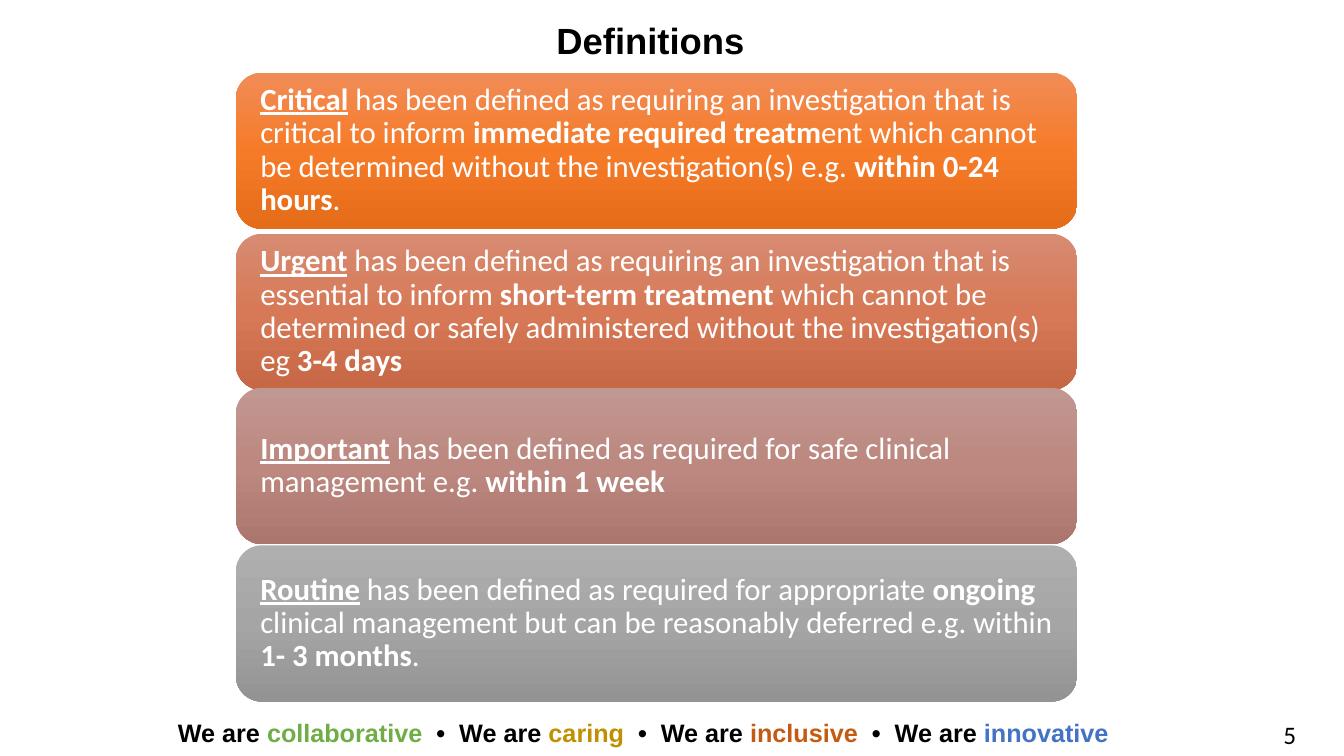
from lxml import etree
from pptx import Presentation
from pptx.dml.color import RGBColor
from pptx.enum.shapes import MSO_SHAPE as Shape
from pptx.enum.text import MSO_ANCHOR as Anchor, PP_ALIGN as Align
from pptx.oxml.ns import qn
from pptx.util import Pt

# Content: each definition has a top, gradient colours, term and (text, bold) runs
DEFINITIONS = [
    (51.8, ("F18C57", "F67B28", "E56C19"), "Critical", [
        (" has been defined as requiring an investigation that is critical to inform ", False),
        ("immediate required treatm", True),
        ("ent which cannot be determined without the investigation(s) e.g. ", False),
        ("within 0-24 hours", True),
        (".", False)]),
    (167, ("D78B72", "D77956", "C66846"), "Urgent", [
        (" has been defined as requiring an investigation that is essential to inform ", False),
        ("short-term treatment ", True),
        ("which cannot be determined or safely administered without the investigation(s) eg ", False),
        ("3-4 days", True)]),
    (277, ("C19791", "BC8880", "AA766E"), "Important", [
        (" has been defined as required for safe clinical management e.g. ", False),
        ("within 1 week", True)]),
    (389.5, ("AFAFAF", "A5A5A5", "939393"), "Routine", [
        (" has been defined as required for appropriate ", False),
        ("ongoing", True),
        (" clinical management but can be reasonably deferred e.g. within ", False),
        ("1- 3 months", True),
        (".", False)]),
]
VALUES = [("collaborative", "70AD47"), ("caring", "BF9000"),
          ("inclusive", "C55A11"), ("innovative", "4472C4")]
BLACK, WHITE = "000000", "FFFFFF"
CARD_LEFT, CARD_WIDTH, CARD_HEIGHT, CARD_INSET = 168.5, 601, 111.6, 12


def color(value):
    return RGBColor.from_string(value)


def add_run(para, text, font, size, ink, bold=False, underline=False):
    span = para.add_run()
    span.text = text
    span.font.name, span.font.size = font, Pt(size)
    span.font.bold, span.font.underline = bold, underline
    span.font.color.rgb = color(ink)


def add_text(page, left, top, width, height, align=Align.LEFT, anchor=Anchor.TOP):
    box = page.shapes.add_textbox(Pt(left), Pt(top), Pt(width), Pt(height))
    box.text_frame.word_wrap = True
    box.text_frame.vertical_anchor = anchor
    para = box.text_frame.paragraphs[0]
    para.alignment = align
    return para


def fill_gradient(shape, colors):
    gradient = etree.SubElement(shape._element.spPr, qn("a:gradFill"), rotWithShape="1")
    stops = etree.SubElement(gradient, qn("a:gsLst"))
    for index, value in enumerate(colors):
        stop = etree.SubElement(stops, qn("a:gs"), pos=str(index * 50000))
        etree.SubElement(stop, qn("a:srgbClr"), val=str(color(value)))
    etree.SubElement(gradient, qn("a:lin"), ang="5400000", scaled="0")


def add_card(page, top, colors, term, runs):
    card = page.shapes.add_shape(Shape.ROUNDED_RECTANGLE, Pt(CARD_LEFT), Pt(top),
                                 Pt(CARD_WIDTH), Pt(CARD_HEIGHT))
    fill_gradient(card, colors)
    card.line.fill.background()
    card.shadow.inherit = False
    frame = card.text_frame
    frame.word_wrap = True
    frame.vertical_anchor = Anchor.MIDDLE
    frame.margin_left = frame.margin_right = Pt(CARD_INSET)
    frame.margin_top = frame.margin_bottom = Pt(CARD_INSET)
    para = frame.paragraphs[0]
    para.alignment = Align.LEFT
    para.line_spacing = 0.9
    add_run(para, term, "Calibri", 22, WHITE, bold=True, underline=True)
    for text, bold in runs:
        add_run(para, text, "Calibri", 22, WHITE, bold)


def main():
    deck = Presentation()
    deck.slide_width, deck.slide_height = Pt(960), Pt(540)
    page = deck.slides.add_slide(deck.slide_layouts[6])

    # Footer values and page number
    para = add_text(page, 120, 509, 720, 29)
    for index, (value, ink) in enumerate(VALUES):
        lead = "  •  We are " if index else "We are "
        add_run(para, lead, "Arial", 18, BLACK, bold=True)
        add_run(para, value, "Arial", 18, ink, bold=True)
    para = add_text(page, 800, 510, 133, 29, Align.RIGHT)
    add_run(para, "5", "Calibri", 18, BLACK)

    # Definition cards
    for definition in DEFINITIONS:
        add_card(page, *definition)

    # Title
    para = add_text(page, 168.5, 4.3, 592.5, 52, Align.CENTER, Anchor.MIDDLE)
    para.line_spacing = 0.9
    add_run(para, "Definitions", "Arial", 26, BLACK, bold=True)

    deck.save("out.pptx")


if __name__ == "__main__":
    main()
